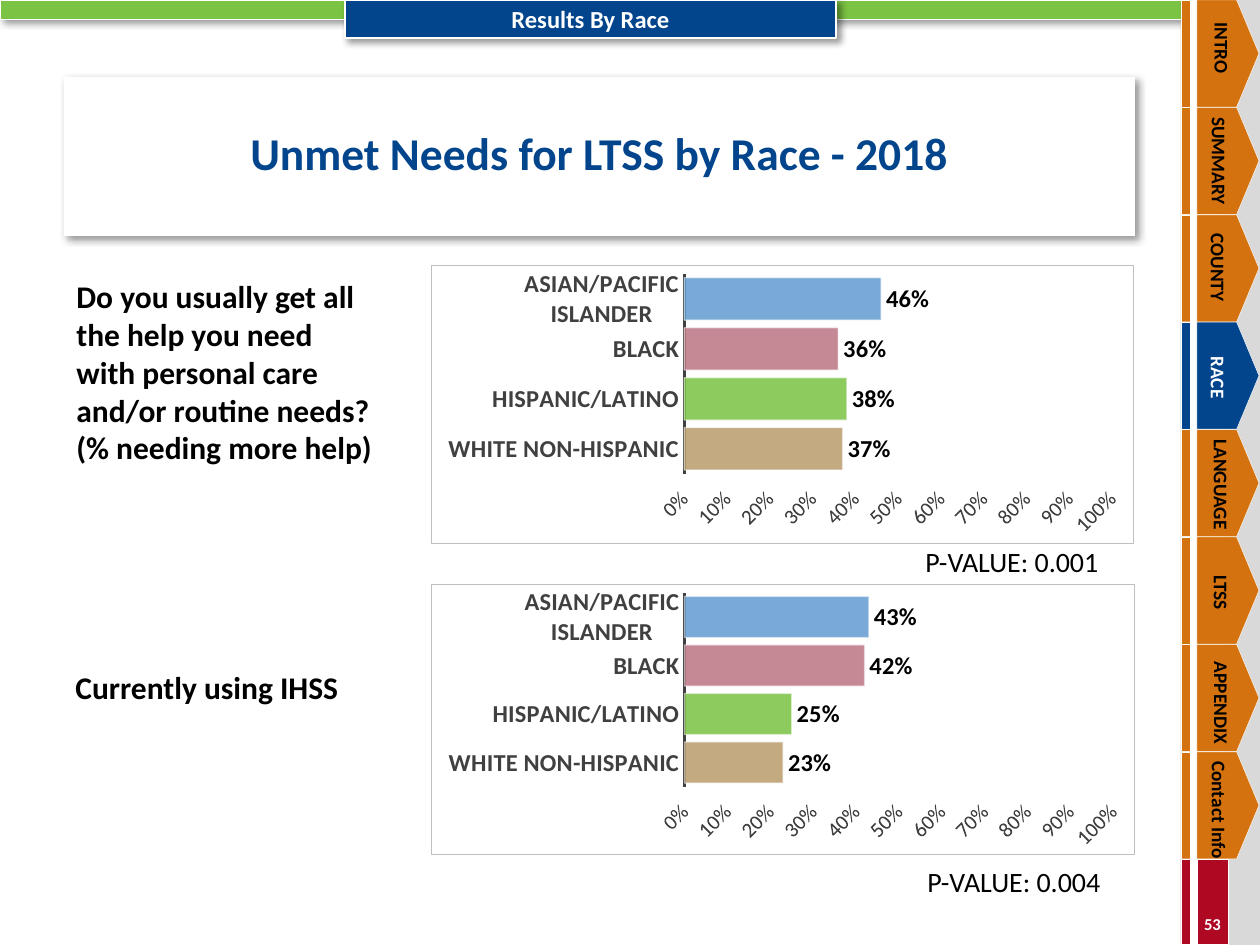
"""Build the slide on unmet LTSS needs by race."""
from lxml.etree import SubElement
from pptx import Presentation
from pptx.chart.data import CategoryChartData
from pptx.dml.color import RGBColor
from pptx.enum.chart import XL_CHART_TYPE as CT, XL_LABEL_POSITION as LP, XL_TICK_MARK as TM
from pptx.enum.shapes import MSO_SHAPE as SH
from pptx.enum.text import MSO_ANCHOR as AN, PP_ALIGN as AL
from pptx.oxml import parse_xml
from pptx.oxml.ns import nsdecls, qn
from pptx.util import Pt

PX = 914400 / 126
C = {"white": "FFFFFF", "black": "000000", "gray": "D9D9D9", "red": "AE0823",
     "green": "7BC342", "orange": "D4720F", "blue": "02458C", "dark": "404040",
     "border": "BFBFBF", "tan": "BA9C6C", "rose": "BC7583", "sky": "629CD0"}

prs = Presentation()
prs.slide_width, prs.slide_height = round(1260 * PX), round(945 * PX)
s = prs.slides.add_slide(prs.slide_layouts[6])


def block(kind, box, fill, line=0.25, shadow=False):
    sp = s.shapes.add_shape(kind, *[round(v * PX) for v in box])
    sp.shadow.inherit = False
    sp.fill.solid()
    sp.fill.fore_color.rgb = RGBColor.from_string(C[fill])
    if line:
        sp.line.color.rgb = RGBColor.from_string(C["white"])
        sp.line.width = Pt(line)
    else:
        sp.line.fill.background()
    if shadow:
        sp._element.spPr.find(qn("a:effectLst")).append(parse_xml(
            f'<a:outerShdw {nsdecls("a")} blurRad="50800" dist="38100" dir="2700000" '
            'algn="tl" rotWithShape="0"><a:srgbClr val="000000"><a:alpha val="40000"/>'
            '</a:srgbClr></a:outerShdw>'))
    return sp


def write(sp, text, size, color="black", bold=True, align=AL.LEFT, anchor=AN.TOP, wrap=True):
    tf = sp.text_frame
    tf.word_wrap = wrap
    tf.vertical_anchor = anchor
    p = tf.paragraphs[0]
    p.alignment = align
    r = p.add_run()
    r.text = text
    r.font.name, r.font.size, r.font.bold = "Calibri", Pt(size), bold
    r.font.color.rgb = RGBColor.from_string(C[color])
    return tf


block(SH.RECTANGLE, (1222, 0, 38, 945), "gray", line=0)
for left, width in ((1197, 31), (1181, 9)):
    block(SH.RECTANGLE, (left, 859, width, 85), "red")
sp = s.shapes.add_textbox(*[round(v * PX) for v in (1197, 914, 31, 20)])
tf = write(sp, "53", 9.5, "white", align=AL.CENTER, anchor=AN.MIDDLE)
tf.margin_left = tf.margin_right = tf.margin_top = tf.margin_bottom = 0

block(SH.RECTANGLE, (0, 0, 1181, 19), "green", shadow=True)
for i in range(8):
    fill = "blue" if i == 3 else "orange"
    top = i * 107.4
    block(SH.RECTANGLE, (1181, top, 9, 107), fill)
    sp = block(SH.PENTAGON, (1197, top, 62, 107), fill)
    sp.adjustments[0] = 0.36

sp = block(SH.RECTANGLE, (345, 0, 491, 38), "blue", line=0.75, shadow=True)
write(sp, "Results By Race", 14, "white", align=AL.CENTER, anchor=AN.MIDDLE)

cats = ["WHITE NON-HISPANIC", "HISPANIC/LATINO", "BLACK", "ASIAN/PACIFIC ISLANDER"]
charts = [((431, 265, 703, 279), (0.37, 0.38, 0.36, 0.46), 71),
          ((431, 584, 704, 271), (0.23, 0.25, 0.42, 0.43), 0)]
for box, vals, overlap in charts:
    data = CategoryChartData(number_format="###0%")
    data.categories = cats
    data.add_series("Series 1", vals)
    gf = s.shapes.add_chart(CT.BAR_CLUSTERED, *[round(v * PX) for v in box], data)
    chart = gf.chart
    chart.has_legend = chart.has_title = False
    chart.font.name, chart.font.size = "Calibri", Pt(10)
    chart._chartSpace.find(qn("c:chart")).addnext(parse_xml(
        f'<c:spPr {nsdecls("c", "a")}><a:noFill/><a:ln w="9525"><a:solidFill>'
        f'<a:srgbClr val="{C["border"]}"/></a:solidFill></a:ln></c:spPr>'))

    area = chart._chartSpace.find(qn("c:chart")).find(qn("c:plotArea"))
    for old in area.findall(qn("c:layout")):
        area.remove(old)
    layout = parse_xml(f'<c:layout {nsdecls("c")}><c:manualLayout/></c:layout>')
    for tag, val in (("layoutTarget", "inner"), ("xMode", "edge"), ("yMode", "edge"),
                     ("x", "0.36"), ("y", "0.03"), ("w", "0.61"), ("h", "0.72")):
        SubElement(layout[0], qn(f"c:{tag}")).set("val", val)
    area.insert(0, layout)

    ca, va = chart.category_axis, chart.value_axis
    for ax, size, bold in ((ca, 14, True), (va, 12, False)):
        ax.has_major_gridlines = False
        ax.minor_tick_mark = TM.NONE
        font = ax.tick_labels.font
        font.name, font.size, font.bold = "Calibri", Pt(size), bold
        font.color.rgb = RGBColor.from_string(C["dark"])
    ca.major_tick_mark = TM.NONE
    ca.format.line.color.rgb = RGBColor.from_string(C["dark"])
    ca.format.line.width = Pt(1.5)
    va.major_tick_mark = TM.OUTSIDE
    va.format.line.fill.background()
    va.minimum_scale, va.maximum_scale, va.major_unit = 0, 1, 0.1
    va.tick_labels.number_format = "###0%"
    va.tick_labels.number_format_is_linked = False
    va._element.find(qn("c:txPr")).find(qn("a:bodyPr")).set("rot", "-2700000")

    plot = chart.plots[0]
    plot.gap_width, plot.overlap, plot.vary_by_categories = 18, overlap, False
    for i, name in enumerate(("tan", "green", "rose", "sky")):
        fmt = plot.series[0].points[i].format
        fmt.fill.solid()
        fmt.fill.fore_color.rgb = RGBColor.from_string(C[name])
        fmt.line.color.rgb = RGBColor.from_string(C["white"])
        fmt.line.width = Pt(0.75)
    for dpt in plot.series[0]._element.findall(qn("c:dPt")):
        for clr, alpha in zip(dpt.iter(qn("a:srgbClr")), ("85000", "50000")):
            SubElement(clr, qn("a:alpha")).set("val", alpha)
    dl = plot.series[0].data_labels
    dl.show_value, dl.position = True, LP.OUTSIDE_END
    dl.number_format, dl.number_format_is_linked = "###0%", False
    dl.font.name, dl.font.size, dl.font.bold = "Calibri", Pt(14), True
    dl.font.color.rgb = RGBColor.from_string(C["black"])

question = ("Do you usually get all the help you need with personal care "
            "and/or routine needs? (% needing more help)")
for text, box, size, bold in (("P-VALUE: 0.001", (913, 538, 221, 47), 16, False),
                              (question, (64, 271, 324, 204), 18, True),
                              ("Currently using IHSS", (63, 662, 323, 50), 18, True),
                              ("P-VALUE: 0.004", (915, 858, 221, 47), 16, False)):
    sp = s.shapes.add_textbox(*[round(v * PX) for v in box])
    write(sp, text, size, bold=bold)

sp = block(SH.RECTANGLE, (64, 77, 1071, 159), "white", line=0, shadow=True)
tf = write(sp, "Unmet Needs for LTSS by Race - 2018", 26, "blue", align=AL.CENTER, anchor=AN.MIDDLE)
p = tf.paragraphs[0]
p.line_spacing = 0.85
indent = round(64 * PX)
p._p.get_or_add_pPr().set("marL", str(indent))
p._p.get_or_add_pPr().set("indent", str(-indent))

for text, box in (("INTRO", (1183, 30, 77, 37)), ("APPENDIX", (1167, 685, 108, 37))):
    sp = s.shapes.add_textbox(*[round(v * PX) for v in box])
    sp.rotation = 90
    write(sp, text, 11, wrap=False)
for text, box in (("SUMMARY", (1208, 110, 34, 102)), ("COUNTY", (1207, 214, 32, 107)),
                  ("RACE", (1207, 324, 50, 107)), ("LANGUAGE", (1210, 431, 50, 107)),
                  ("LTSS", (1210, 539, 50, 107)), ("Contact Info", (1208, 756, 32, 108))):
    sp = s.shapes.add_textbox(*[round(v * PX) for v in box])
    tf = write(sp, text, 11, "white" if text == "RACE" else "black", align=AL.CENTER, anchor=AN.BOTTOM)
    tf.margin_left = tf.margin_right = tf.margin_top = tf.margin_bottom = 0
    tf.paragraphs[0].line_spacing = 0.85
    tf._txBody.bodyPr.set("vert", "vert")

prs.save("out.pptx")
